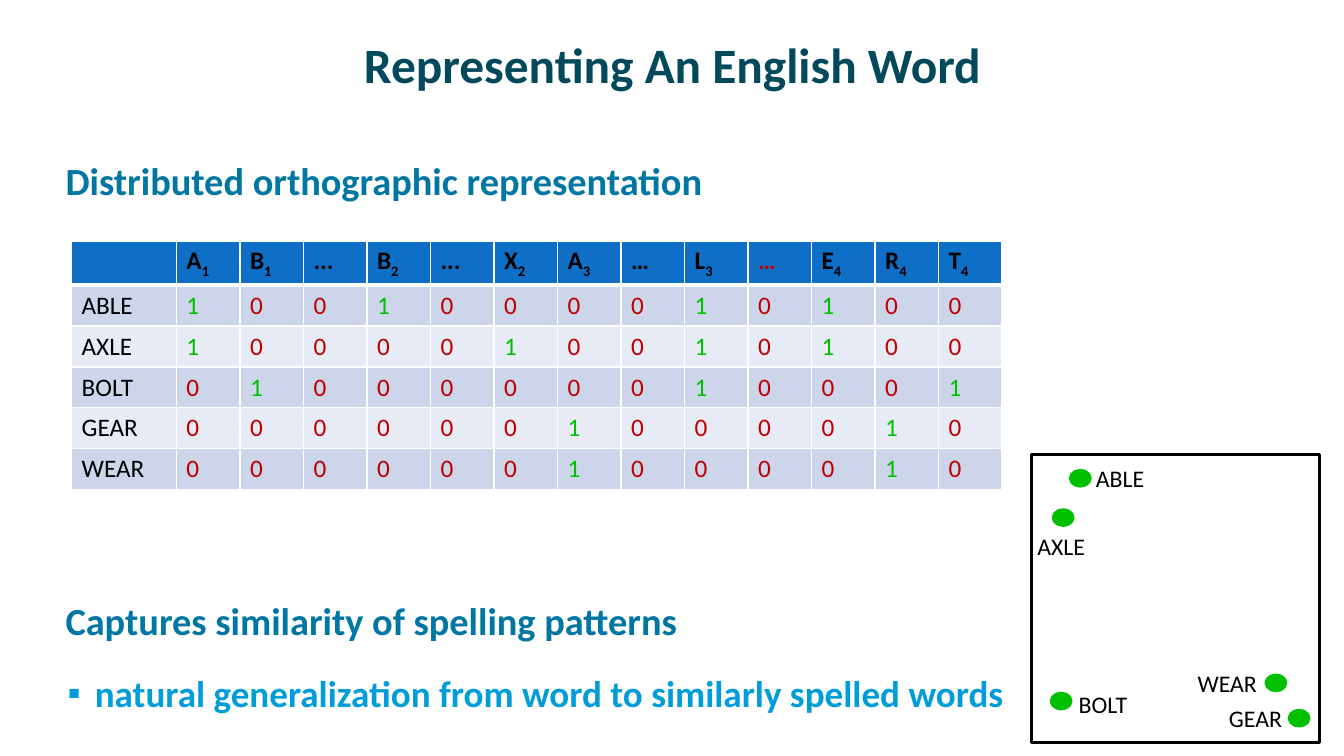
from dataclasses import dataclass

from lxml import etree
from pptx import Presentation
from pptx.dml.color import RGBColor
from pptx.enum.shapes import MSO_SHAPE
from pptx.enum.text import MSO_ANCHOR, MSO_AUTO_SIZE, PP_ALIGN
from pptx.oxml.ns import qn
from pptx.shapes.base import BaseShape
from pptx.slide import Slide
from pptx.table import _Cell
from pptx.text.text import TextFrame, _Paragraph, _Run
from pptx.util import Inches, Pt

OVAL, RECTANGLE = MSO_SHAPE.OVAL, MSO_SHAPE.RECTANGLE
MIDDLE, TOP = MSO_ANCHOR.MIDDLE, MSO_ANCHOR.TOP
CENTER, LEFT = PP_ALIGN.CENTER, PP_ALIGN.LEFT
NO_AUTOFIT = MSO_AUTO_SIZE.NONE


@dataclass(frozen=True)
class Theme:
    font: str = "Calibri"
    title: str = "03495C"
    heading: str = "0076A3"
    detail: str = "009DD9"
    black: str = "000000"
    white: str = "FFFFFF"
    active: str = "00C000"
    inactive: str = "C00000"
    header_fill: str = "0F6FC6"
    band_fills: tuple[str, str] = ("CCD5EA", "E7EBF5")
    title_size: float = 35.3
    heading_size: float = 27.4
    detail_size: float = 26.5
    table_size: float = 18
    label_size: float = 17


@dataclass(frozen=True)
class BodyLine:
    text: str
    size: float
    color: str
    space_before: float
    margin: float
    hanging: float = 0
    level: int = 0
    bullet: str = ""


@dataclass(frozen=True)
class WordVector:
    word: str
    bits: str


@dataclass(frozen=True)
class WordPoint:
    word: str
    dot_left: float
    dot_top: float
    label_left: float
    label_top: float
    label_width: float


THEME = Theme()
BODY_LINES = [
    BodyLine("Distributed orthographic representation", THEME.heading_size, THEME.heading, 19.5, 0.1),
    BodyLine("Captures similarity of spelling patterns", THEME.heading_size, THEME.heading, 281, 0.1),
    BodyLine("natural generalization from word to similarly spelled words",
             THEME.detail_size, THEME.detail, 19.5, 0.39, -0.27, 1, "▪"),
]
LETTER_UNITS = ["A1", "B1", "...", "B2", "...", "X2", "A3", "…", "L3", "…", "E4", "R4", "T4"]
RED_UNIT = 9
WORD_VECTORS = [
    WordVector("ABLE", "1001000010100"),
    WordVector("AXLE", "1000010010100"),
    WordVector("BOLT", "0100000010001"),
    WordVector("GEAR", "0000001000010"),
    WordVector("WEAR", "0000001000010"),
]
WORD_POINTS = [
    WordPoint("ABLE", 10.63, 4.68, 10.77, 4.55, 0.7),
    WordPoint("AXLE", 10.46, 5.07, 10.19, 5.23, 0.7),
    WordPoint("BOLT", 10.44, 6.89, 10.6, 6.79, 0.69),
    WordPoint("GEAR", 12.8, 7.06, 12.09, 6.93, 0.73),
    WordPoint("WEAR", 12.57, 6.71, 11.78, 6.58, 0.8),
]


def rgb(color: str) -> RGBColor:
    return RGBColor.from_string(color)


def format_run(run: _Run, size: float, color: str, bold: bool = False) -> None:
    run.font.name = THEME.font
    run.font.size = Pt(size)
    run.font.bold = bold
    run.font.color.rgb = rgb(color)


def place(shape: BaseShape, left: float, top: float, width: float, height: float) -> None:
    shape.left, shape.top = Inches(left), Inches(top)
    shape.width, shape.height = Inches(width), Inches(height)


def prepare_frame(text_frame: TextFrame, anchor: MSO_ANCHOR) -> None:
    text_frame.word_wrap = True
    text_frame.auto_size = NO_AUTOFIT
    text_frame.vertical_anchor = anchor
    text_frame.margin_left = text_frame.margin_right = Inches(0.11)
    text_frame.margin_top = text_frame.margin_bottom = Inches(0.06)


def set_bullet(paragraph: _Paragraph, line: BodyLine) -> None:
    properties = paragraph._p.get_or_add_pPr()
    properties.set("marL", str(Inches(line.margin)))
    properties.set("indent", str(Inches(line.hanging)))
    if line.bullet:
        etree.SubElement(properties, qn("a:buFont")).set("typeface", "Arial")
        etree.SubElement(properties, qn("a:buChar")).set("char", line.bullet)
    else:
        etree.SubElement(properties, qn("a:buNone"))


def fill_placeholders(slide: Slide) -> None:
    title, body = slide.placeholders
    place(title, 0.67, 0.17, 12, 0.92)
    prepare_frame(title.text_frame, MIDDLE)
    title.text_frame.text = "Representing An English Word"
    heading = title.text_frame.paragraphs[0]
    heading.alignment = CENTER
    format_run(heading.runs[0], THEME.title_size, THEME.title, True)

    place(body, 0.44, 1.5, 12.22, 5.56)
    prepare_frame(body.text_frame, TOP)
    body.text_frame.text = "\n".join(line.text for line in BODY_LINES)
    for paragraph, line in zip(body.text_frame.paragraphs, BODY_LINES):
        paragraph.level = line.level
        paragraph.alignment = LEFT
        paragraph.space_before = Pt(line.space_before)
        set_bullet(paragraph, line)
        format_run(paragraph.runs[0], line.size, line.color, True)


def style_cell(cell: _Cell, fill: str, top_width: float, bottom_width: float) -> None:
    """Give the cell white borders and a solid fill."""
    properties = cell._tc.get_or_add_tcPr()
    for side, width in (("L", 1), ("R", 1), ("T", top_width), ("B", bottom_width)):
        border = etree.SubElement(properties, qn(f"a:ln{side}"), w=str(Pt(width)))
        solid = etree.SubElement(border, qn("a:solidFill"))
        etree.SubElement(solid, qn("a:srgbClr"), val=THEME.white)
    cell.fill.solid()
    cell.fill.fore_color.rgb = rgb(fill)


def write_letter_unit(cell: _Cell, unit: str, color: str) -> None:
    """Write a letter with its position as a subscript."""
    paragraph = cell.text_frame.paragraphs[0]
    parts = list(unit) if unit[-1].isdigit() else [unit]
    for part in parts:
        run = paragraph.add_run()
        run.text = part
        format_run(run, THEME.table_size, color, True)
        if part.isdigit():
            run.font._element.set("baseline", "-25000")


def add_vector_table(slide: Slide) -> None:
    row_count, column_count = len(WORD_VECTORS) + 1, len(LETTER_UNITS) + 1
    table = slide.shapes.add_table(row_count, column_count, Inches(0.71), Inches(2.39),
                                   Inches(9.25), Inches(2.43)).table
    table.first_row = table.horz_banding = False
    for index, column in enumerate(table.columns):
        column.width = Inches(0.63 if index else 1.04)

    for index in range(column_count):
        style_cell(table.cell(0, index), THEME.header_fill, 1, 3)
    for index, unit in enumerate(LETTER_UNITS):
        color = THEME.inactive if index == RED_UNIT else THEME.black
        write_letter_unit(table.cell(0, index + 1), unit, color)

    colors = {"1": THEME.active, "0": THEME.inactive}
    for row, vector in enumerate(WORD_VECTORS, start=1):
        for column, value in enumerate([vector.word, *vector.bits]):
            cell = table.cell(row, column)
            style_cell(cell, THEME.band_fills[(row - 1) % 2], 3 if row == 1 else 1, 1)
            cell.text_frame.text = value
            run = cell.text_frame.paragraphs[0].runs[0]
            format_run(run, THEME.table_size, colors.get(value, THEME.black))


def add_similarity_map(slide: Slide) -> None:
    frame = slide.shapes.add_shape(RECTANGLE, Inches(10.23), Inches(4.51), Inches(2.86), Inches(2.86))
    frame.shadow.inherit = False
    frame.fill.background()
    frame.line.color.rgb = rgb(THEME.black)
    frame.line.width = Pt(2)
    for point in WORD_POINTS:
        dot = slide.shapes.add_shape(OVAL, Inches(point.dot_left), Inches(point.dot_top),
                                     Inches(0.17), Inches(0.13))
        dot.shadow.inherit = False
        dot.fill.solid()
        dot.fill.fore_color.rgb = dot.line.color.rgb = rgb(THEME.active)
        dot.line.width = Pt(4)
        label = slide.shapes.add_textbox(Inches(point.label_left), Inches(point.label_top),
                                         Inches(point.label_width), Inches(0.39))
        label.text_frame.word_wrap = False
        label.text_frame.text = point.word
        format_run(label.text_frame.paragraphs[0].runs[0], THEME.label_size, THEME.black)


def main() -> None:
    presentation = Presentation()
    presentation.slide_width, presentation.slide_height = Inches(13.33), Inches(7.5)
    slide = presentation.slides.add_slide(presentation.slide_layouts[1])
    fill_placeholders(slide)
    add_vector_table(slide)
    add_similarity_map(slide)
    presentation.save("out.pptx")


if __name__ == "__main__":
    main()
